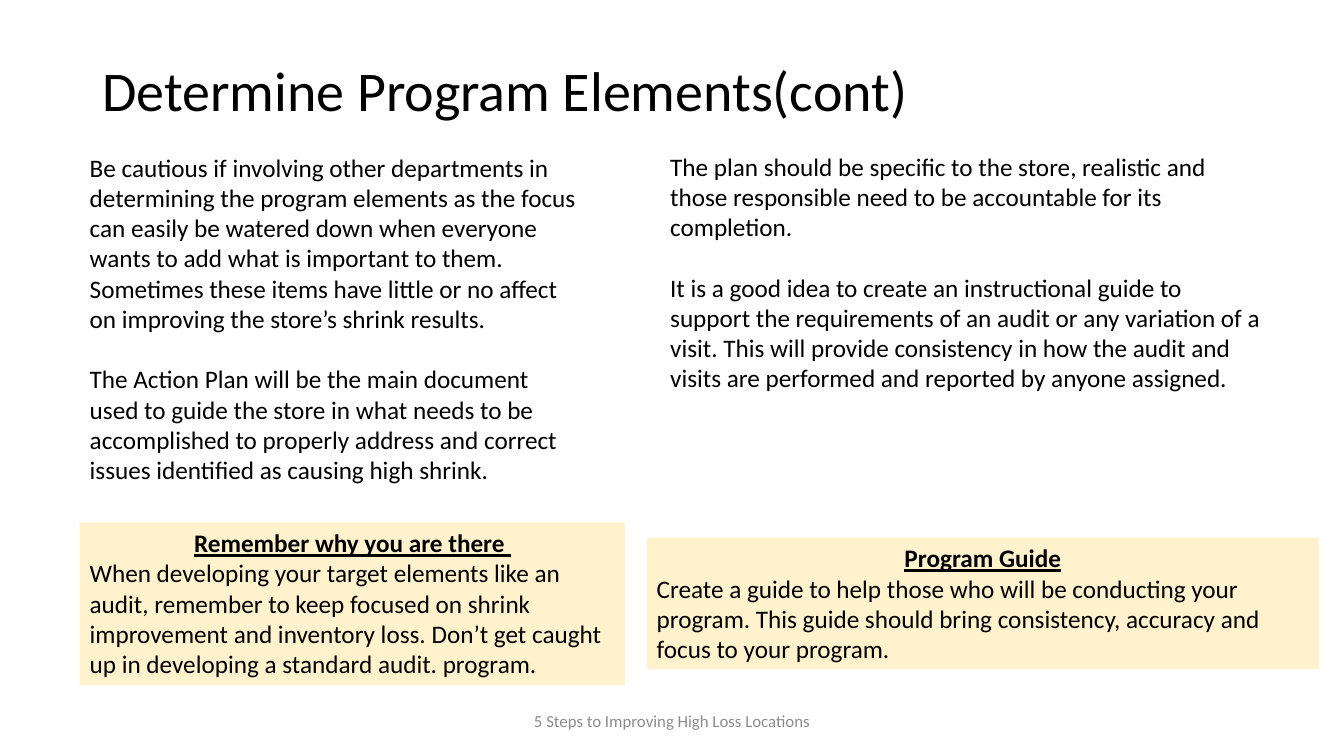
"""Build the slide on program elements, with two text columns and two reminder panels."""
from pptx import Presentation
from pptx.dml.color import RGBColor
from pptx.enum.shapes import MSO_SHAPE
from pptx.enum.text import MSO_ANCHOR as Anchor, MSO_AUTO_SIZE as Fit, PP_ALIGN as Align
from pptx.util import Inches, Pt

COLORS = {"ink": "000000", "footer": "8C8C8C", "panel": "FFF2CC"}
COLUMNS, ROWS = 160, 90
BODY_SIZE, BODY_LINE = 18, 21.6

deck = Presentation()
deck.slide_width, deck.slide_height = Inches(13.33), Inches(7.5)
column, row = deck.slide_width / COLUMNS, deck.slide_height / ROWS
slide = deck.slides.add_slide(deck.slide_layouts[6])


def place(area):
    left, top, width, height = area
    return int(left * column), int(top * row), int(width * column), int(height * row)


def write(frame, paragraphs, anchor=Anchor.TOP, fit=Fit.NONE):
    for name, value in {"word_wrap": True, "vertical_anchor": anchor, "auto_size": fit}.items():
        setattr(frame, name, value)
    for index, (wording, color, layout, font) in enumerate(paragraphs):
        paragraph = frame.add_paragraph() if index else frame.paragraphs[0]
        run = paragraph.add_run()
        run.text = wording
        run.font.color.rgb = RGBColor.from_string(COLORS[color])
        for name, value in {"alignment": Align.LEFT, **layout}.items():
            setattr(paragraph, name, value)
        for name, value in {"name": "Calibri", "size": Pt(BODY_SIZE), **font}.items():
            setattr(run.font, name, value)


headline = slide.shapes.add_textbox(*place((11, 4.8, 110.5, 12.6)))
write(headline.text_frame,
      [("Determine Program Elements(cont)", "ink", {"line_spacing": 0.9}, {"size": Pt(40)})],
      Anchor.MIDDLE)

footer = slide.shapes.add_textbox(*place((53, 83.4, 54, 4.8)))
write(footer.text_frame,
      [("5 Steps to Improving High Loss Locations", "footer",
        {"alignment": Align.CENTER}, {"size": Pt(12)})],
      Anchor.MIDDLE)

advice = [
    ((9.5, 17.5, 60.4, 41.2),
     "Be cautious if involving other departments in determining the program elements as the "
     "focus can easily be watered down when everyone wants to add what is important to them. "
     "Sometimes these items have little or no affect on improving the store’s shrink results.",
     "The Action Plan will be the main document used to guide the store in what needs to be "
     "accomplished to properly address and correct issues identified as causing high shrink."),
    ((78.6, 17.4, 72.8, 30.2),
     "The plan should be specific to the store, realistic and those responsible need to be "
     "accountable for its completion.",
     "It is a good idea to create an instructional guide to support the requirements of an "
     "audit or any variation of a visit. This will provide consistency in how the audit and "
     "visits are performed and reported by anyone assigned."),
]
for area, opening, follow_up in advice:
    passage = slide.shapes.add_textbox(*place(area))
    write(passage.text_frame,
          [(opening, "ink", {}, {}),
           (follow_up, "ink", {"space_before": Pt(BODY_LINE)}, {})],
          fit=Fit.SHAPE_TO_FIT_TEXT)

reminders = [
    ((9.5, 62.2, 64.9, 19.4), "Remember why you are there ",
     "When developing your target elements like an audit, remember to keep focused on shrink "
     "improvement and inventory loss. Don’t get caught up in developing a standard audit. "
     "program."),
    ((77, 64, 80, 15.7), "Program Guide",
     "Create a guide to help those who will be conducting your program. This guide should "
     "bring consistency, accuracy and focus to your program."),
]
for area, heading, message in reminders:
    panel = slide.shapes.add_shape(MSO_SHAPE.RECTANGLE, *place(area))
    panel.shadow.inherit = False
    panel.fill.solid()
    panel.fill.fore_color.rgb = RGBColor.from_string(COLORS["panel"])
    panel.line.fill.background()
    write(panel.text_frame,
          [(heading, "ink", {"alignment": Align.CENTER}, {"bold": True, "underline": True}),
           (message, "ink", {}, {})],
          fit=Fit.SHAPE_TO_FIT_TEXT)

deck.save("out.pptx")
